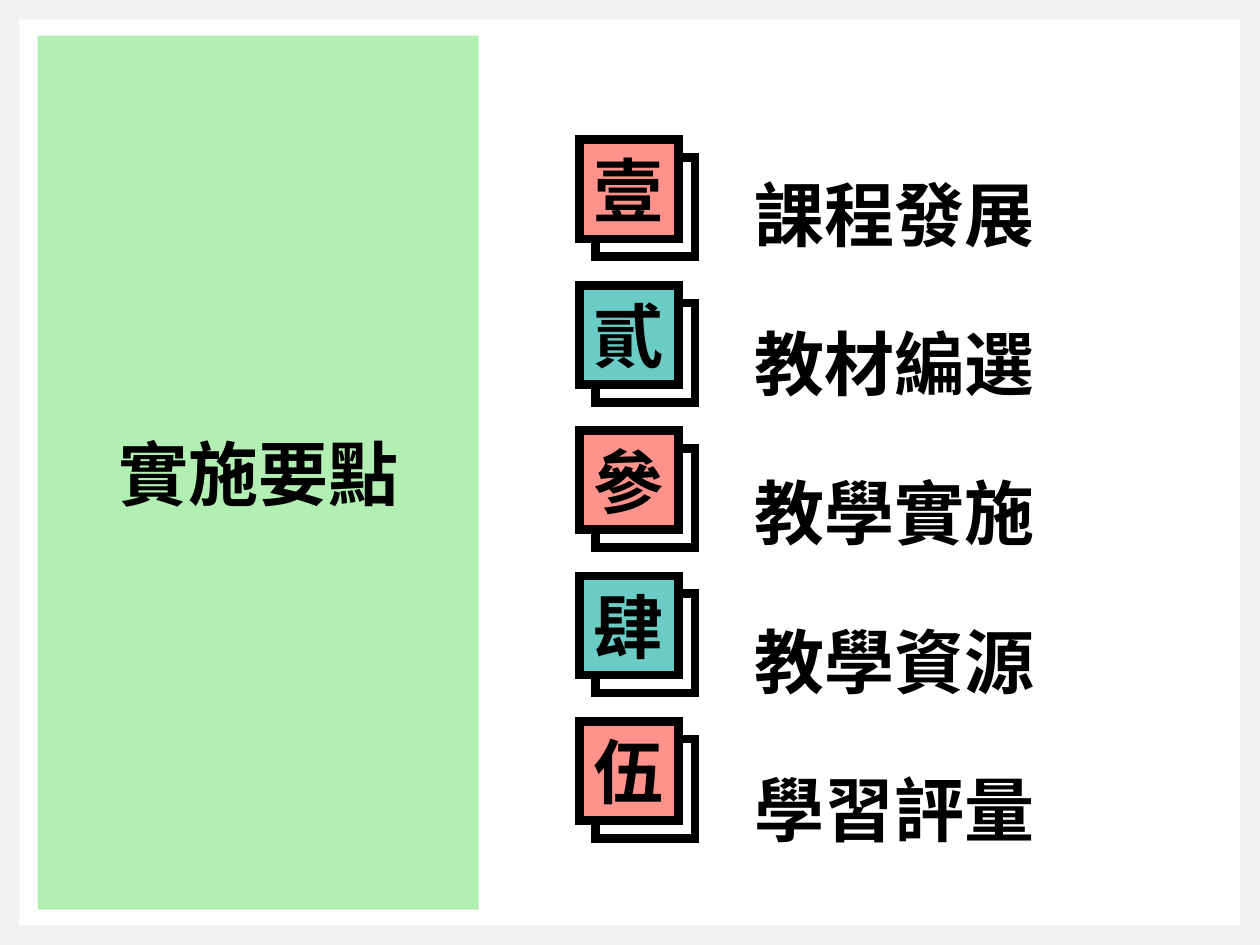
from lxml.etree import SubElement
from pptx import Presentation
from pptx.dml.color import RGBColor
from pptx.enum.shapes import MSO_SHAPE
from pptx.enum.text import MSO_ANCHOR, MSO_AUTO_SIZE, PP_ALIGN
from pptx.oxml.ns import qn
from pptx.util import Cm, Pt

COLORS = {
    "background": "F2F2F2",
    "white": "FFFFFF",
    "green": "00CC00",
    "coral": "FF938C",
    "teal": "6BCBC5",
    "black": "000000",
}
FONT = "Noto Sans CJK SC"
TOPICS = [
    ("壹", "課程發展"),
    ("貳", "教材編選"),
    ("參", "教學實施"),
    ("肆", "教學資源"),
    ("伍", "學習評量"),
]
BADGE_SIZE = 2
BADGE_LEFT, BADGE_TOP = 11.68, 2.82
BADGE_PITCH = 2.93
BACK_OFFSET_X, BACK_OFFSET_Y = 0.33, 0.36


def set_fill(fill, color):
    fill.solid()
    fill.fore_color.rgb = RGBColor.from_string(COLORS[color])


def place(shape, left, top, width, height):
    shape.left, shape.top = Cm(left), Cm(top)
    shape.width, shape.height = Cm(width), Cm(height)


def format_paragraph(para, alignment):
    para.alignment = alignment
    para.space_before = Pt(0)
    para.font.size = Pt(40)
    para.font.bold = True
    para.font.name = FONT
    set_fill(para.font.fill, "black")
    defaults = para._p.pPr.find(qn("a:defRPr"))
    SubElement(defaults, qn("a:ea"), typeface=FONT)


def add_rectangle(slide, left, top, width, height, color):
    box = slide.shapes.add_shape(
        MSO_SHAPE.RECTANGLE, Cm(left), Cm(top), Cm(width), Cm(height)
    )
    box.shadow.inherit = False
    set_fill(box.fill, color)
    box.line.fill.background()
    return box


def add_page_panel(slide):
    panel = add_rectangle(slide, 0.39, 0.39, 24.61, 18.26, "white")
    slide.shapes._spTree.insert(2, panel._element)


def fill_title(title):
    place(title, 0.76, 0.72, 8.89, 17.62)
    set_fill(title.fill, "green")
    color = title._element.spPr.find(qn("a:solidFill"))[0]
    SubElement(color, qn("a:alpha"), val="30000")
    frame = title.text_frame
    frame.text = "實施要點"
    frame.vertical_anchor = MSO_ANCHOR.MIDDLE
    frame.auto_size = MSO_AUTO_SIZE.NONE
    format_paragraph(frame.paragraphs[0], PP_ALIGN.CENTER)


def fill_topics(body):
    place(body, 14.96, 2.03, 10.44, 14.96)
    frame = body.text_frame
    frame.text = "\n".join(topic for _, topic in TOPICS)
    frame.vertical_anchor = MSO_ANCHOR.TOP
    frame.auto_size = MSO_AUTO_SIZE.NONE
    for para in frame.paragraphs:
        properties = para._p.get_or_add_pPr()
        properties.set("marL", "0")
        properties.set("indent", "0")
        SubElement(properties, qn("a:buNone"))
        para.line_spacing = Pt(85)
        format_paragraph(para, PP_ALIGN.LEFT)


def add_square(slide, left, top, color):
    square = add_rectangle(slide, left, top, BADGE_SIZE, BADGE_SIZE, color)
    set_fill(square.line.fill, "black")
    square.line.width = Pt(5)
    outline = square._element.spPr.find(qn("a:ln"))
    SubElement(outline, qn("a:miter"), lim="800000")
    return square


def add_badge(slide, top, numeral, color):
    add_square(slide, BADGE_LEFT + BACK_OFFSET_X, top + BACK_OFFSET_Y, "white")
    front = add_square(slide, BADGE_LEFT, top, color)
    frame = front.text_frame
    frame.margin_left = frame.margin_right = 0
    frame.margin_top = frame.margin_bottom = 0
    frame.vertical_anchor = MSO_ANCHOR.MIDDLE
    frame.text = numeral
    format_paragraph(frame.paragraphs[0], PP_ALIGN.CENTER)


def main():
    deck = Presentation()
    deck.slide_width, deck.slide_height = Cm(25.4), Cm(19.05)
    page = deck.slides.add_slide(deck.slide_layouts[1])
    set_fill(page.background.fill, "background")
    add_page_panel(page)
    fill_title(page.shapes.title)
    fill_topics(page.placeholders[1])
    for index, (numeral, _) in enumerate(TOPICS):
        color = ("coral", "teal")[index % 2]
        add_badge(page, BADGE_TOP + index * BADGE_PITCH, numeral, color)
    deck.save("out.pptx")


if __name__ == "__main__":
    main()
